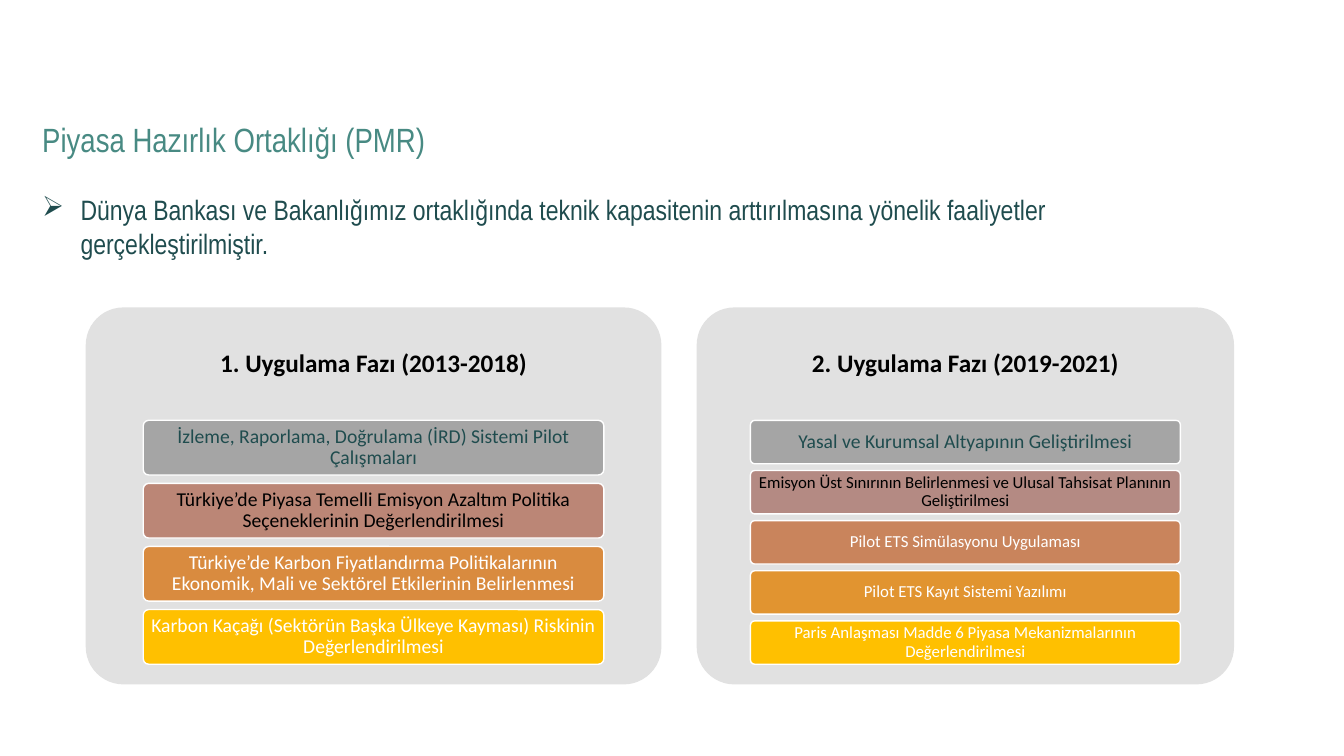
from dataclasses import dataclass

from lxml.etree import SubElement as Sub
from pptx import Presentation
from pptx.dml.color import RGBColor as Color
from pptx.enum.shapes import MSO_SHAPE as Form
from pptx.enum.text import MSO_ANCHOR as Anchor, PP_ALIGN as Align
from pptx.oxml.ns import qn
from pptx.shapes.autoshape import Shape
from pptx.slide import Slide
from pptx.text.text import TextFrame as Frame
from pptx.util import Inches, Pt


@dataclass(frozen=True)
class Theme:
    narrow: str = "Arial Narrow"
    body: str = "Calibri"
    title: str = "488A83"
    teal: str = "1F4C4E"
    black: str = "000000"
    white: str = "FFFFFF"
    panel: str = "E1E1E1"
    gray: str = "A5A5A5"
    rose: str = "BB8676"
    amber: str = "D98B3F"
    gold: str = "FFC000"
    mauve: str = "B48A83"
    clay: str = "C9845C"
    orange: str = "E19430"
    big: int = 24
    lead: int = 20
    head: int = 18
    mid: int = 14
    small: int = 12


T = Theme()


@dataclass(frozen=True)
class Bar:
    text: str
    fill: str
    ink: str = T.white
    size: int = T.mid


@dataclass(frozen=True)
class Phase:
    head: str
    left: float
    width: float
    bars: tuple[Bar, ...]


PHASES = (
    Phase("1. Uygulama Fazı (2013-2018)", 0.85, 5.71, (
        Bar("İzleme, Raporlama, Doğrulama (İRD) Sistemi Pilot Çalışmaları", T.gray, T.teal),
        Bar("Türkiye’de Piyasa Temelli Emisyon Azaltım Politika Seçeneklerinin Değerlendirilmesi",
            T.rose, T.black),
        Bar("Türkiye’de Karbon Fiyatlandırma Politikalarının Ekonomik, Mali ve Sektörel "
            "Etkilerinin Belirlenmesi", T.amber),
        Bar("Karbon Kaçağı (Sektörün Başka Ülkeye Kayması) Riskinin Değerlendirilmesi", T.gold),
    )),
    Phase("2. Uygulama Fazı (2019-2021)", 6.91, 5.33, (
        Bar("Yasal ve Kurumsal Altyapının Geliştirilmesi", T.gray, T.teal),
        Bar("Emisyon Üst Sınırının Belirlenmesi ve Ulusal Tahsisat Planının Geliştirilmesi",
            T.mauve, T.black, T.small),
        Bar("Pilot ETS Simülasyonu Uygulaması", T.clay, size=T.small),
        Bar("Pilot ETS Kayıt Sistemi Yazılımı", T.orange, size=T.small),
        Bar("Paris Anlaşması Madde 6 Piyasa Mekanizmalarının Değerlendirilmesi",
            T.gold, size=T.small),
    )),
)
TOP, HIGH, HEAD, STACK, GAP = 3.05, 3.74, 1.12, 2.42, 2 / 13


def write(frame: Frame, text: str, *, size: int, ink: str, font: str = T.body,
          bold: bool = False, align: Align = Align.LEFT, line: float = 1.0,
          before: int = 0, mark: str = "", more: bool = False) -> None:
    par = frame.add_paragraph() if more else frame.paragraphs[0]
    par.alignment, par.line_spacing = align, line
    if before:
        par.space_before = Pt(before)
    if mark:
        props = par._p.get_or_add_pPr()
        props.set("marL", str(Inches(0.38)))
        props.set("indent", str(-Inches(0.38)))
        Sub(props, qn("a:buChar")).set("char", mark)
    run = par.add_run()
    run.text = text
    run.font.name, run.font.size, run.font.bold = font, Pt(size), bold
    run.font.color.rgb = Color.from_string(ink)


def pad(frame: Frame, inset: float) -> None:
    frame.word_wrap = True
    frame.vertical_anchor = Anchor.MIDDLE
    frame.margin_left = frame.margin_right = Inches(inset)
    frame.margin_top = frame.margin_bottom = Inches(inset)


def block(slide: Slide, left: float, top: float, width: float, high: float,
          fill: str, edge: str = "") -> Shape:
    shape = slide.shapes.add_shape(Form.ROUNDED_RECTANGLE, Inches(left), Inches(top),
                                   Inches(width), Inches(high))
    shape.shadow.inherit = False
    shape.adjustments[0] = 0.1
    shape.fill.solid()
    shape.fill.fore_color.rgb = Color.from_string(fill)
    if edge:
        shape.line.color.rgb = Color.from_string(edge)
        shape.line.width = Pt(1)
    else:
        shape.line.fill.background()
    return shape


def intro(slide: Slide) -> None:
    box = slide.shapes.add_textbox(Inches(0.32), Inches(1.13), Inches(10.79), Inches(1.92))
    frame = box.text_frame
    frame.word_wrap = True
    write(frame, "Piyasa Hazırlık Ortaklığı (PMR)", size=T.big, ink=T.title, font=T.narrow)
    write(frame, "Dünya Bankası ve Bakanlığımız ortaklığında teknik kapasitenin "
          "arttırılmasına yönelik faaliyetler gerçekleştirilmiştir.",
          size=T.lead, ink=T.teal, font=T.narrow, before=24, mark="➢", more=True)


def panel(slide: Slide, phase: Phase) -> None:
    block(slide, phase.left, TOP, phase.width, HIGH, T.panel)
    box = slide.shapes.add_textbox(Inches(phase.left), Inches(TOP),
                                   Inches(phase.width), Inches(HEAD))
    pad(box.text_frame, 0.07)
    write(box.text_frame, phase.head, size=T.head, ink=T.black, bold=True,
          align=Align.CENTER, line=0.9)
    count = len(phase.bars)
    high = STACK / (count + (count - 1) * GAP)
    for row, bar in enumerate(phase.bars):
        top = TOP + HEAD + row * high * (1 + GAP)
        shape = block(slide, phase.left + 0.1 * phase.width, top,
                      0.8 * phase.width, high, bar.fill, T.white)
        pad(shape.text_frame, 0.03)
        write(shape.text_frame, bar.text, size=bar.size, ink=bar.ink,
              align=Align.CENTER, line=0.9)


def main() -> None:
    deck = Presentation()
    deck.slide_width, deck.slide_height = Inches(13.33), Inches(7.5)
    slide = deck.slides.add_slide(deck.slide_layouts[6])
    intro(slide)
    for phase in PHASES:
        panel(slide, phase)
    deck.save("out.pptx")


if __name__ == "__main__":
    main()
